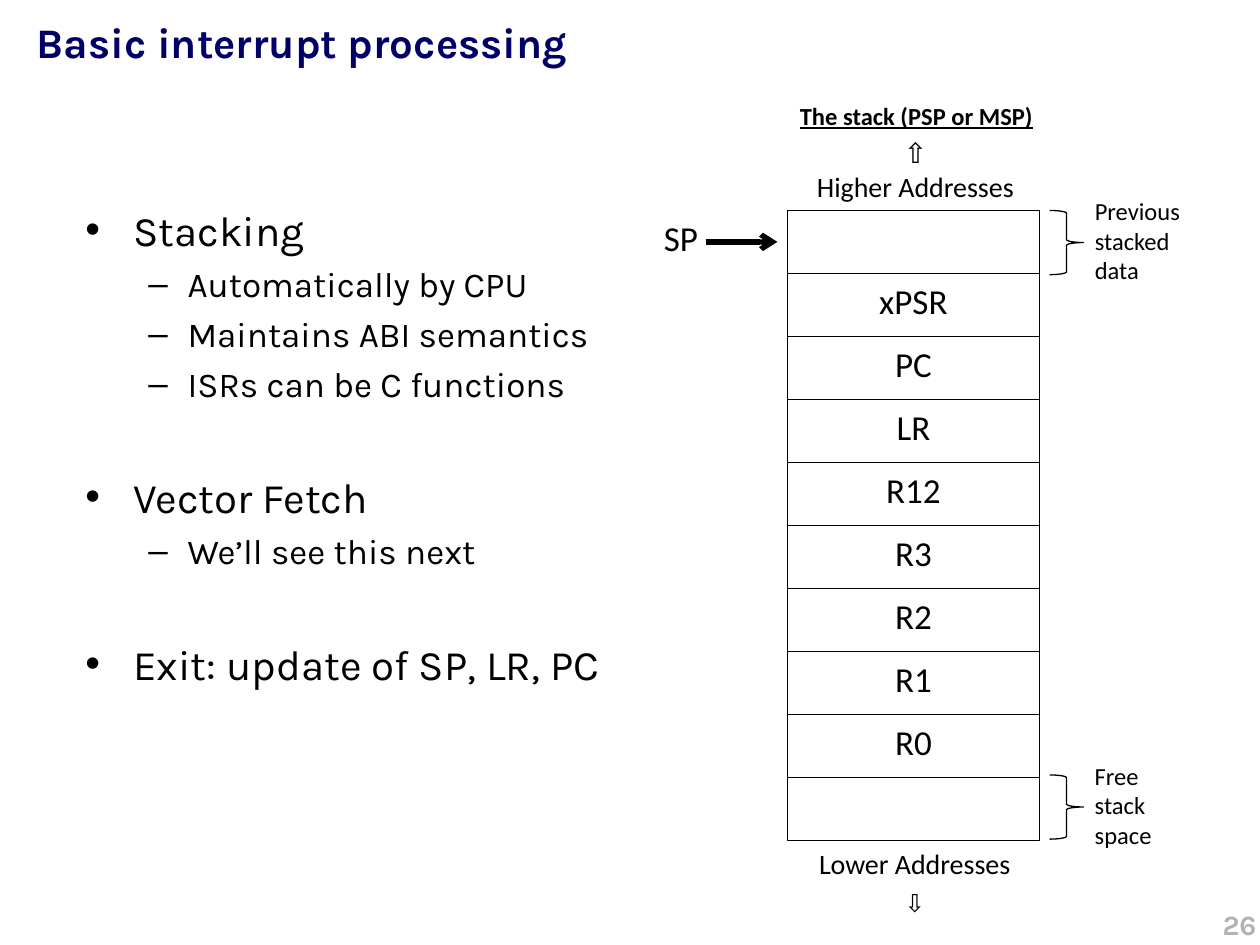
"""Build the slide on interrupt processing with its stack diagram."""
from dataclasses import dataclass

from lxml import etree
from pptx import Presentation
from pptx.dml.color import RGBColor
from pptx.enum.shapes import MSO_CONNECTOR, MSO_SHAPE
from pptx.enum.text import MSO_ANCHOR, MSO_AUTO_SIZE, PP_ALIGN
from pptx.oxml.ns import qn
from pptx.util import Inches, Pt

LEFT, CENTER, RIGHT = PP_ALIGN.LEFT, PP_ALIGN.CENTER, PP_ALIGN.RIGHT
TOP = MSO_ANCHOR.TOP
NO_FIT, GROW = MSO_AUTO_SIZE.NONE, MSO_AUTO_SIZE.SHAPE_TO_FIT_TEXT
RECTANGLE, BRACE = MSO_SHAPE.RECTANGLE, MSO_SHAPE.RIGHT_BRACE
STRAIGHT = MSO_CONNECTOR.STRAIGHT
TITLE_ONLY = 5


@dataclass(frozen=True)
class Theme:
    """Fonts, colours and type sizes of the slide."""
    heading: str = "Karla"
    label: str = "Calibri"
    symbol: str = "Arial"
    navy: RGBColor = RGBColor(0, 0, 0x66)
    ink: RGBColor = RGBColor(0, 0, 0)
    paper: RGBColor = RGBColor(0xFF, 0xFF, 0xFF)
    grey: RGBColor = RGBColor(0xB2, 0xB2, 0xB2)
    large: int = 24
    medium: int = 20
    small: int = 16
    note: int = 14
    thin: float = 0.75
    thick: float = 3


THEME = Theme()
STACK_LEFT, STACK_TOP, STACK_WIDTH, ROW = 6.25, 1.67, 2, 0.5
STACK_MIDDLE = STACK_LEFT + STACK_WIDTH / 2
REGISTERS = ["", "xPSR", "PC", "LR", "R12", "R3", "R2", "R1", "R0", ""]
OUTLINE = [
    ("Stacking", ["Automatically by CPU", "Maintains ABI semantics",
                  "ISRs can be C functions"]),
    ("Vector Fetch", ["We’ll see this next"]),
    ("Exit: update of SP, LR, PC", []),
]


def set_font(target, name, size, color=THEME.ink, **extra):
    """Apply font values to a paragraph or span."""
    values = {"name": name, "size": Pt(size), **extra}
    for key, value in values.items():
        setattr(target.font, key, value)
    target.font.color.rgb = color


def set_frame(frame, wrap, fit):
    """Anchor a text frame at its top and set wrapping and fitting."""
    values = {"word_wrap": wrap, "auto_size": fit, "vertical_anchor": TOP}
    for key, value in values.items():
        setattr(frame, key, value)


def add_text(shapes, area, lines, size, font=THEME.label, align=LEFT,
             wrap=False, **extra):
    """Add a text box with one paragraph per line."""
    box = shapes.add_textbox(*map(Inches, area))
    frame = box.text_frame
    set_frame(frame, wrap, NO_FIT if wrap else GROW)
    for index, line in enumerate(lines):
        para = frame.add_paragraph() if index else frame.paragraphs[0]
        para.alignment = align
        span = para.add_run()
        span.text = line
        set_font(span, font, size, **extra)
    return box


def add_outlined(shapes, kind, area):
    """Add a white preset shape with a thin black outline."""
    shape = shapes.add_shape(kind, *map(Inches, area))
    shape.shadow.inherit = False
    shape.fill.solid()
    shape.fill.fore_color.rgb = THEME.paper
    shape.line.color.rgb = THEME.ink
    shape.line.width = Pt(THEME.thin)
    return shape


def add_arrow(shapes, start, end):
    """Add a thick straight arrow."""
    arrow = shapes.add_connector(STRAIGHT, *map(Inches, start + end))
    arrow.line.color.rgb = THEME.ink
    arrow.line.width = Pt(THEME.thick)
    etree.SubElement(arrow.line._get_or_add_ln(), qn("a:tailEnd"), type="arrow")
    etree.SubElement(arrow._element.spPr, qn("a:effectLst"))


def add_bullet(para, text, mark, size, margin, hang, before):
    """Fill a paragraph as a bulleted line with a hanging indent."""
    properties = para._p.get_or_add_pPr()
    properties.set("marL", str(Inches(margin)))
    properties.set("indent", str(-Inches(hang)))
    etree.SubElement(properties, qn("a:buFont"), typeface=THEME.symbol)
    etree.SubElement(properties, qn("a:buChar"), char=mark)
    para.space_before = Pt(before)
    span = para.add_run()
    span.text = text
    set_font(span, THEME.heading, size)


def add_title(slide, text):
    """Place and format the title."""
    title = slide.shapes.title
    area = {"left": 0.19, "top": 0.08, "width": 9.71, "height": 1}
    for key, value in area.items():
        setattr(title, key, Inches(value))
    set_frame(title.text_frame, True, NO_FIT)
    para = title.text_frame.paragraphs[0]
    para.alignment = LEFT
    span = para.add_run()
    span.text = text
    set_font(span, THEME.heading, THEME.large, THEME.navy, bold=True)


def add_outline(slide):
    """Add the two-level list of processing steps."""
    box = slide.shapes.add_textbox(*map(Inches, (0.58, 1.08, 4.58, 5.92)))
    frame = box.text_frame
    set_frame(frame, True, NO_FIT)
    frame.margin_top = Inches(0.54)
    for index, (step, details) in enumerate(OUTLINE):
        para = frame.add_paragraph() if index else frame.paragraphs[0]
        add_bullet(para, step, "•", THEME.large, 0.38, 0.38, 38 if index else 0)
        for detail in details:
            para = frame.add_paragraph()
            para.level = 1
            add_bullet(para, detail, "–", THEME.medium, 0.81, 0.31, 4.6)


def add_stack(shapes):
    """Add the stack cells with their register names."""
    tops = [STACK_TOP + index * ROW for index in range(len(REGISTERS))]
    for top in tops:
        add_outlined(shapes, RECTANGLE, (STACK_LEFT, top, STACK_WIDTH, ROW))
    for top, name in zip(tops, REGISTERS):
        if name:
            width = 0.24 + 0.13 * len(name)
            add_text(shapes, (STACK_MIDDLE - width / 2, top, width, 0.44),
                     [name], THEME.medium, align=CENTER)


def add_pointer(shapes):
    """Add the grouped stack pointer label and arrow."""
    pointer = shapes.add_group_shape().shapes
    middle = STACK_TOP + ROW / 2
    add_arrow(pointer, (5.6, middle), (6.17, middle))
    add_text(pointer, (5.17, STACK_TOP, 0.48, 0.44), ["SP"], THEME.medium)


def add_braced_note(shapes, top, width, lines):
    """Add a brace beside the stack and the note it points to."""
    brace = add_outlined(shapes, BRACE, (8.33, top, 0.27, 0.51))
    brace.adjustments[0] = 0.083
    add_text(shapes, (8.59, top - 0.16, width, 0.81), lines, THEME.note)


def add_captions(shapes):
    """Add the heading and the address directions around the stack."""
    add_text(shapes, (6.25, 0.75, 2.07, 0.34), ["The stack (PSP or MSP)"],
             THEME.note, bold=True, underline=True)
    higher = add_text(shapes, (6.37, 1.03, 1.79, 0.64),
                      ["⇧", "Higher Addresses"], THEME.small, align=CENTER)
    higher.text_frame.paragraphs[0].runs[0].font.name = THEME.symbol
    add_text(shapes, (6.39, 6.67, 1.74, 0.37), ["Lower Addresses"],
             THEME.small, align=CENTER)
    down = add_text(shapes, (7.08, 7, 0.36, 0.34), ["⇧"], THEME.note,
                    THEME.symbol, CENTER)
    down.rotation = 180


def main():
    """Build and save the deck."""
    deck = Presentation()
    deck.slide_width, deck.slide_height = Inches(10), Inches(7.5)
    slide = deck.slides.add_slide(deck.slide_layouts[TITLE_ONLY])
    shapes = slide.shapes
    add_title(slide, "Basic interrupt processing")
    add_outline(slide)
    add_stack(shapes)
    add_pointer(shapes)
    add_braced_note(shapes, 1.67, 0.89, ["Previous", "stacked", "data"])
    add_braced_note(shapes, 6.15, 0.66, ["Free", "stack", "space"])
    add_captions(shapes)
    add_text(shapes, (6.9, 7.15, 3.17, 0.5), ["26"], THEME.small,
             THEME.heading, RIGHT, wrap=True, color=THEME.grey, bold=True)
    deck.save("out.pptx")


if __name__ == "__main__":
    main()
